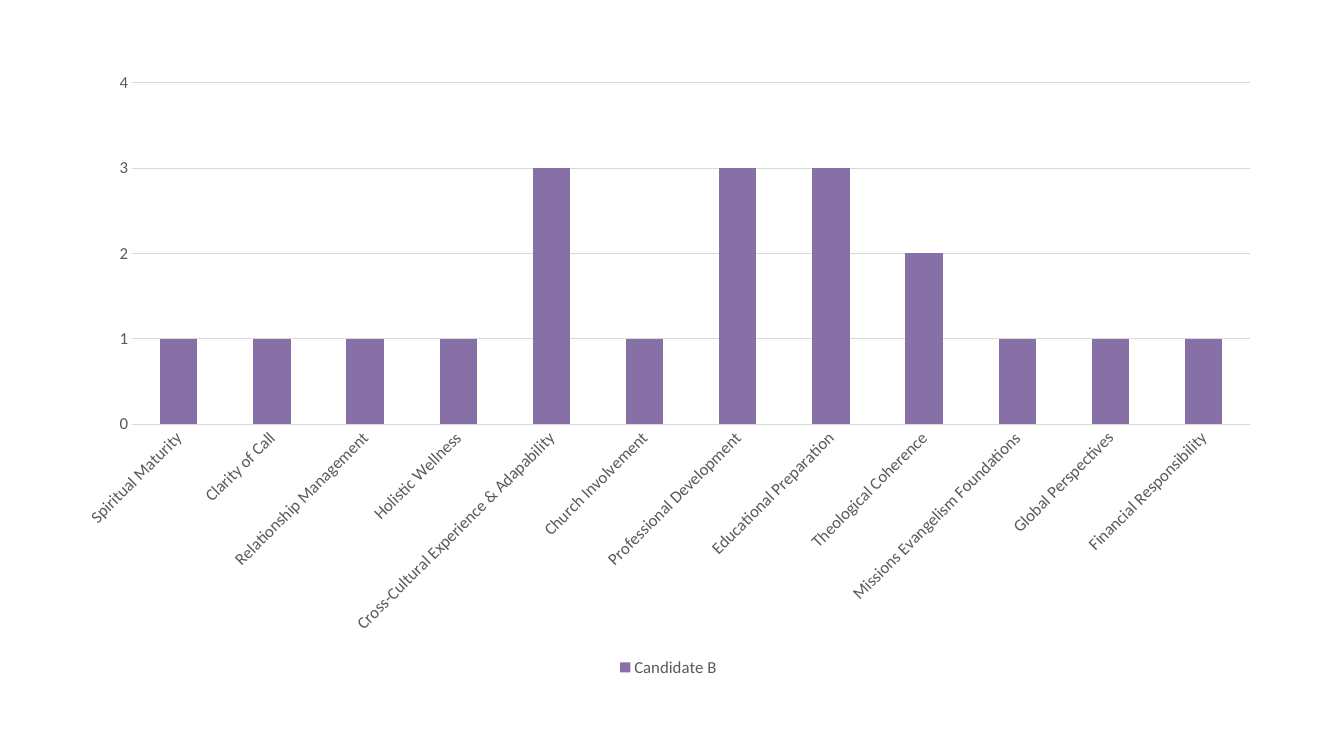
import dataclasses

import pptx
import pptx.chart.data
import pptx.dml.color
import pptx.enum.chart
import pptx.util

EMU_PER_PX = 9144  # 100 px to the inch


@dataclasses.dataclass(frozen=True)
class Theme:
    font: str = "Calibri"
    label_size: int = 12
    grid_width: float = 0.75
    background: str = "FFFFFF"
    label: str = "595959"
    grid: str = "D9D9D9"
    bar: str = "8770A5"


THEME = Theme()
CANDIDATE = "Candidate B"
SCORES = {
    "Spiritual Maturity": 1,
    "Clarity of Call": 1,
    "Relationship Management": 1,
    "Holistic Wellness": 1,
    "Cross-Cultural Experience & Adapability": 3,
    "Church Involvement": 1,
    "Professional Development": 3,
    "Educational Preparation": 3,
    "Theological Coherence": 2,
    "Missions Evangelism Foundations": 1,
    "Global Perspectives": 1,
    "Financial Responsibility": 1,
}


def px(n):
    return pptx.util.Emu(n * EMU_PER_PX)


def rgb(value):
    return pptx.dml.color.RGBColor.from_string(value)


def style_font(font):
    font.name = THEME.font
    font.size = pptx.util.Pt(THEME.label_size)
    font.bold = False
    font.color.rgb = rgb(THEME.label)


def add_score_chart(slide, left, top, width, height):
    data = pptx.chart.data.CategoryChartData(number_format="General")
    data.categories = list(SCORES)
    data.add_series(CANDIDATE, list(SCORES.values()))
    frame = slide.shapes.add_chart(
        pptx.enum.chart.XL_CHART_TYPE.COLUMN_CLUSTERED,
        px(left), px(top), px(width), px(height), data)
    chart = frame.chart
    chart.has_title = False
    style_font(chart.font)

    # Bars
    plot = chart.plots[0]
    plot.vary_by_categories = False
    plot.gap_width = 150
    fill = plot.series[0].format.fill
    fill.solid()
    fill.fore_color.rgb = rgb(THEME.bar)

    # Axes
    for axis in (chart.category_axis, chart.value_axis):
        axis.major_tick_mark = pptx.enum.chart.XL_TICK_MARK.NONE
        axis.minor_tick_mark = pptx.enum.chart.XL_TICK_MARK.NONE
        axis.format.line.fill.background()
        style_font(axis.tick_labels.font)
    scale = chart.value_axis
    scale.minimum_scale, scale.maximum_scale, scale.major_unit = 0, 4, 1
    scale.has_major_gridlines = True
    grid = scale.major_gridlines.format.line
    grid.color.rgb = rgb(THEME.grid)
    grid.width = pptx.util.Pt(THEME.grid_width)

    # Category labels slant upwards by 45 degrees
    for body in chart.element.xpath(".//c:catAx/c:txPr/a:bodyPr") if hasattr(chart, "element") \
            else chart._chartSpace.xpath(".//c:catAx/c:txPr/a:bodyPr"):
        body.set("rot", str(-45 * 60000))

    # Legend
    chart.has_legend = True
    chart.legend.position = pptx.enum.chart.XL_LEGEND_POSITION.BOTTOM
    chart.legend.include_in_layout = False
    style_font(chart.legend.font)


def main():
    prs = pptx.Presentation()
    prs.slide_width, prs.slide_height = px(1333), px(750)
    slide = prs.slides.add_slide(prs.slide_layouts[6])
    fill = slide.background.fill
    fill.solid()
    fill.fore_color.rgb = rgb(THEME.background)
    add_score_chart(slide, 62, 60, 1202, 616)
    prs.save("out.pptx")


if __name__ == "__main__":
    main()
